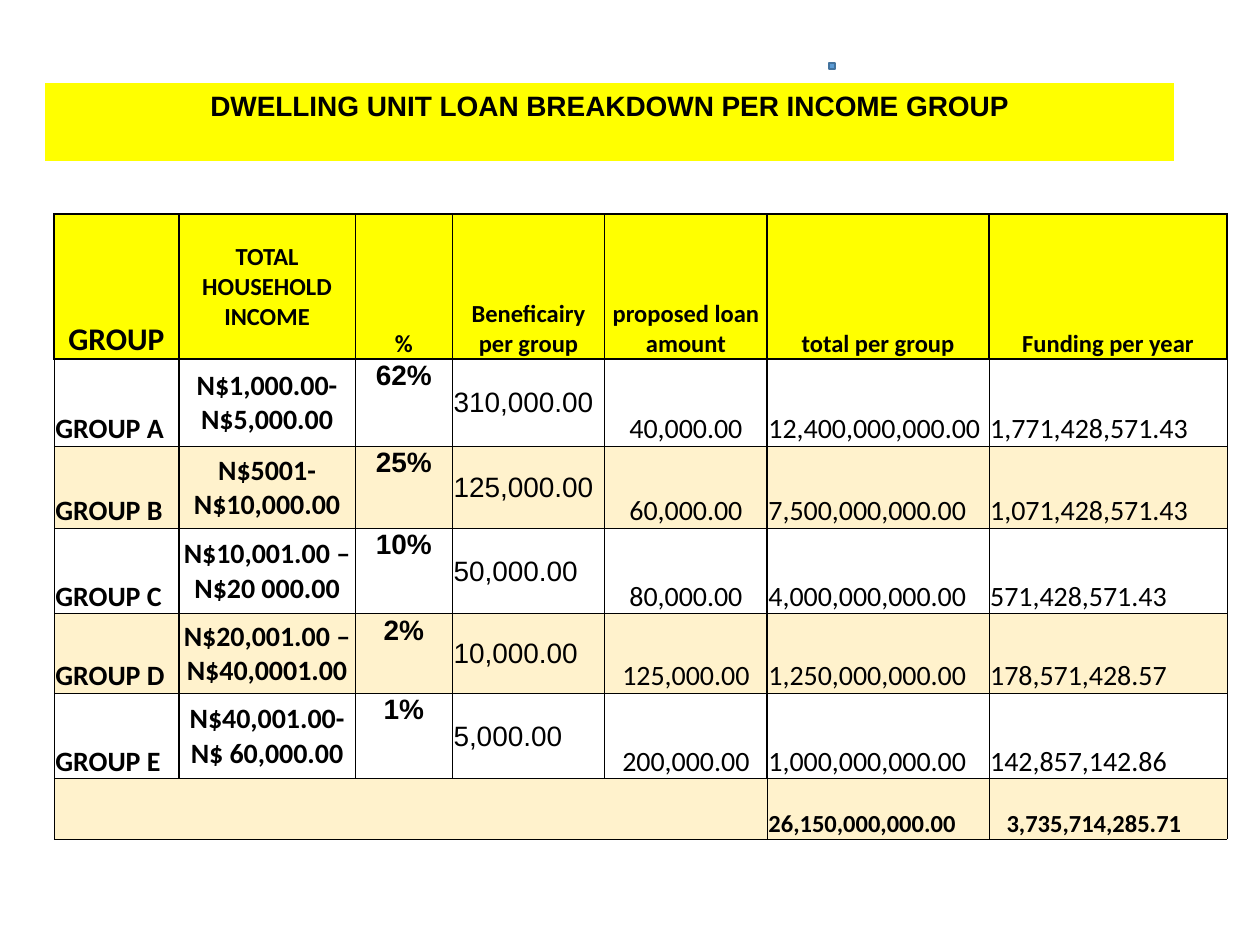
"""Build the slide with the dwelling unit loan breakdown per income group."""
from lxml import etree
from pptx import Presentation
from pptx.dml.color import RGBColor
from pptx.enum.shapes import MSO_SHAPE
from pptx.enum.text import MSO_ANCHOR, MSO_AUTO_SIZE, PP_ALIGN
from pptx.oxml.ns import qn
from pptx.util import Inches, Pt

LEFT, CENTER = PP_ALIGN.LEFT, PP_ALIGN.CENTER
TOP, MIDDLE, BOTTOM = MSO_ANCHOR.TOP, MSO_ANCHOR.MIDDLE, MSO_ANCHOR.BOTTOM
YELLOW, CREAM, BLACK = "FFFF00", "FFF2CC", "000000"


def write(tf, text, size=16, font="Calibri", bold=False, align=LEFT, color=BLACK):
    p = tf.paragraphs[0]
    p.alignment = align
    r = p.add_run()
    r.text = text
    r.font.size, r.font.name, r.font.bold = Pt(size), font, bold
    r.font.color.rgb = RGBColor.from_string(color)


def border(cell, widths):
    tcPr = cell._tc.get_or_add_tcPr()
    for side, width in zip("LRTB", widths):
        ln = etree.SubElement(tcPr, qn(f"a:ln{side}"), w=str(Pt(width)))
        if width:
            fill = etree.SubElement(ln, qn("a:solidFill"))
            etree.SubElement(fill, qn("a:srgbClr"), val=BLACK)
        else:
            etree.SubElement(ln, qn("a:noFill"))


prs = Presentation()
prs.slide_width, prs.slide_height = Inches(10), Inches(7.5)
s = prs.slides.add_slide(prs.slide_layouts[5])

marker = s.shapes.add_shape(MSO_SHAPE.RECTANGLE, Inches(6.58), Inches(0.5), Inches(0.05), Inches(0.05))
marker.shadow.inherit = False
marker.fill.solid()
marker.fill.fore_color.rgb = RGBColor.from_string("5B9BD5")
marker.line.color.rgb = RGBColor.from_string("43739E")
marker.line.width = Pt(1)

title = s.shapes.title
title.left, title.top, title.width, title.height = Inches(0.35), Inches(0.65), Inches(8.98), Inches(0.64)
title.fill.solid()
title.fill.fore_color.rgb = RGBColor.from_string(YELLOW)
title.line.color.rgb = RGBColor.from_string("FFFFFF")
title.line.width = Pt(1.5)
tf = title.text_frame
tf.auto_size = MSO_AUTO_SIZE.NONE
tf.vertical_anchor = TOP
write(tf, "DWELLING UNIT LOAN BREAKDOWN PER INCOME GROUP", font="Arial", bold=True, align=CENTER)

rows = [
    ["GROUP", "TOTAL HOUSEHOLD INCOME", "%", "Beneficairy per group",
     "proposed loan amount", "total per group", "Funding per year"],
    ["GROUP A", "N$1,000.00-N$5,000.00", "62%", "310,000.00",
     "40,000.00", "12,400,000,000.00", "1,771,428,571.43"],
    ["GROUP B", "N$5001-N$10,000.00", "25%", "125,000.00",
     "60,000.00", "7,500,000,000.00", "1,071,428,571.43"],
    ["GROUP C", "N$10,001.00 – N$20 000.00", "10%", "50,000.00",
     "80,000.00", "4,000,000,000.00", "571,428,571.43"],
    ["GROUP D", "N$20,001.00 –N$40,0001.00", "2%", "10,000.00",
     "125,000.00", "1,250,000,000.00", "178,571,428.57"],
    ["GROUP E", "N$40,001.00-N$ 60,000.00", "1%", "5,000.00",
     "200,000.00", "1,000,000,000.00", "142,857,142.86"],
    ["", "", "", "", "", "26,150,000,000.00", "3,735,714,285.71"],
]
col_widths = [0.99, 1.4, 0.77, 1.21, 1.29, 1.76, 1.89]
row_heights = [1.15, 0.69, 0.65, 0.68, 0.63, 0.68, 0.48]
body_formats = [
    (BOTTOM, dict(bold=True)),
    (MIDDLE, dict(bold=True, align=CENTER)),
    (TOP, dict(bold=True, align=CENTER, font="Arial")),
    (MIDDLE, dict(font="Arial")),
    (BOTTOM, dict(align=CENTER)),
    (BOTTOM, {}),
    (BOTTOM, {}),
]
last = len(rows) - 1

table = s.shapes.add_table(len(rows), len(col_widths), Inches(0.43), Inches(1.7),
                           Inches(sum(col_widths)), Inches(sum(row_heights))).table
table.first_row = table.horz_banding = False
for col, width in zip(table.columns, col_widths):
    col.width = Inches(width)
for row, height in zip(table.rows, row_heights):
    row.height = Inches(height)
table.cell(last, 2).merge(table.cell(last, 4))

for i, values in enumerate(rows):
    for j, text in enumerate(values):
        cell = table.cell(i, j)
        anchor, fmt = body_formats[j]
        widths = [1 if j else 0.5, 1, 0.5, 0.5]
        fill = None if i % 2 else CREAM
        if i == 0:
            anchor = MIDDLE if j == 1 else BOTTOM
            fmt = dict(size=14 if j else 18, bold=True, align=CENTER)
            widths = [1, 1, 1, 1]
            fill = YELLOW
        elif i == last:
            anchor, fmt = BOTTOM, dict(size=14, bold=True)
            widths = [0.5 if j in (0, 5, 6) else 0, 0.5 if j >= 4 or j == 2 else 0, 0.5, 0.5]
        elif j >= 5:
            widths = [0.5] * 4
        border(cell, widths)
        if fill:
            cell.fill.solid()
            cell.fill.fore_color.rgb = RGBColor.from_string(fill)
        else:
            cell.fill.background()
        cell.vertical_anchor = anchor
        cell.margin_left = Inches(0.14 if (i, j) == (last, 6) else 0.01)
        cell.margin_right = cell.margin_top = Inches(0.01)
        cell.margin_bottom = 0
        if text:
            write(cell.text_frame, text, **fmt)

prs.save("out.pptx")
